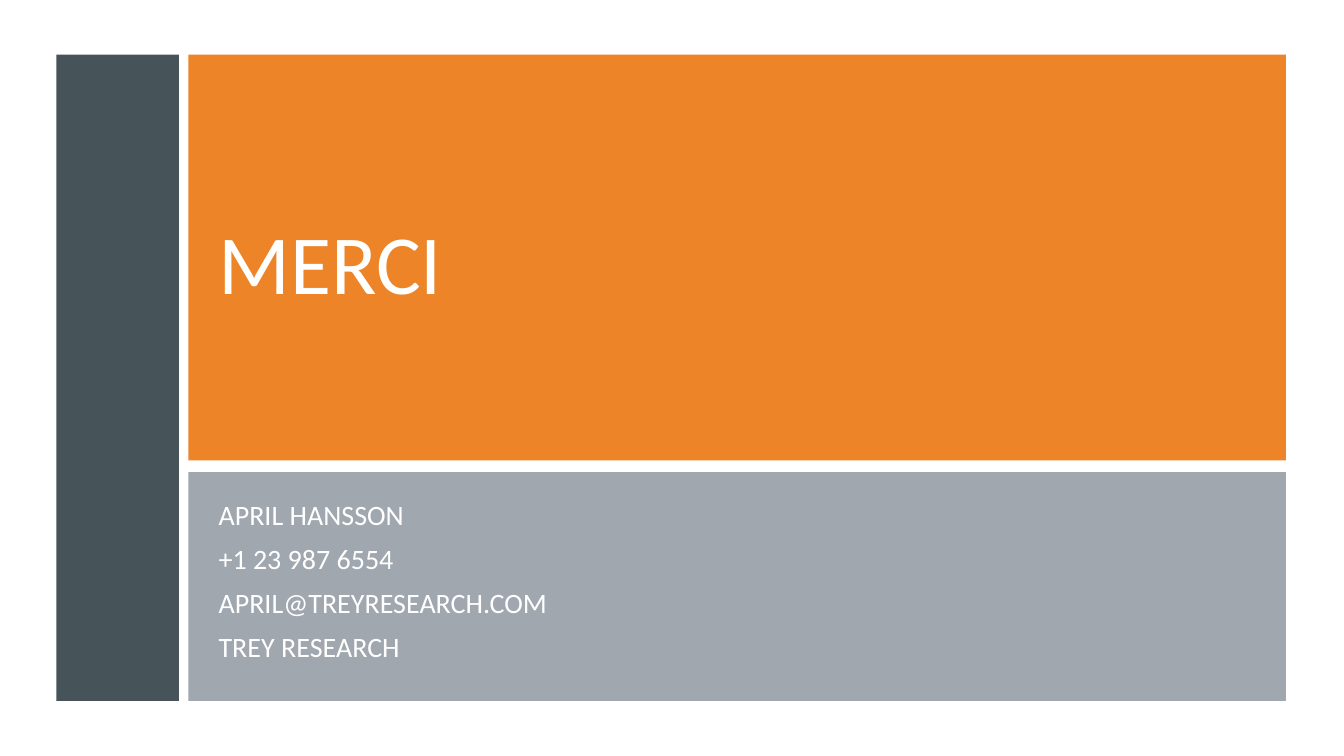
from dataclasses import dataclass

import pptx
import pptx.dml.color
import pptx.enum.shapes
import pptx.enum.text
import pptx.oxml
import pptx.oxml.ns
import pptx.slide
import pptx.util
from pptx.util import Cm, Pt

RGBColor = pptx.dml.color.RGBColor
Anchor = pptx.enum.text.MSO_ANCHOR

WHITE = RGBColor(0xFF, 0xFF, 0xFF)
SLATE = RGBColor(0x46, 0x53, 0x59)
ORANGE = RGBColor(0xED, 0x84, 0x28)
GREY = RGBColor(0x89, 0x92, 0x9B)

PANEL_LEFT, PANEL_WIDTH = 4.75, 27.66
TEXT_LEFT, TEXT_WIDTH = 5.26, 21.03


@dataclass(frozen=True)
class Box:
    """A rectangle in centimetres."""
    left: float
    top: float
    width: float
    height: float

    def lengths(self) -> tuple[pptx.util.Length, ...]:
        return Cm(self.left), Cm(self.top), Cm(self.width), Cm(self.height)


@dataclass(frozen=True)
class Panel:
    box: Box
    color: RGBColor
    opacity: int = 100


PANELS = (
    Panel(Box(1.42, 1.38, 3.09, 16.28), SLATE),
    Panel(Box(PANEL_LEFT, 1.38, PANEL_WIDTH, 10.22), ORANGE),
    Panel(Box(PANEL_LEFT, 11.9, PANEL_WIDTH, 5.76), GREY, opacity=80),
)
CONTACT_LINES = (
    "APRIL HANSSON",
    "+1 23 987 6554",
    "APRIL@TREYRESEARCH.COM",
    "TREY RESEARCH",
)


def add_panel(slide: pptx.slide.Slide, panel: Panel) -> None:
    rectangle = slide.shapes.add_shape(
        pptx.enum.shapes.MSO_SHAPE.RECTANGLE, *panel.box.lengths())
    rectangle.shadow.inherit = False
    rectangle.line.fill.background()
    rectangle.fill.solid()
    rectangle.fill.fore_color.rgb = panel.color
    if panel.opacity < 100:
        color = rectangle.fill._xPr.find(".//" + pptx.oxml.ns.qn("a:srgbClr"))
        alpha = pptx.oxml.parse_xml(
            f'<a:alpha {pptx.oxml.ns.nsdecls("a")} val="{panel.opacity * 1000}"/>')
        color.append(alpha)


def add_text(slide: pptx.slide.Slide, lines: tuple[str, ...], box: Box, *,
             size: float, anchor: Anchor = Anchor.TOP, line_spacing: float = 1.0,
             before: float = 0, after: float = 0) -> None:
    frame = slide.shapes.add_textbox(*box.lengths()).text_frame
    frame.word_wrap = True
    frame.vertical_anchor = anchor
    for index, line in enumerate(lines):
        paragraph = frame.add_paragraph() if index else frame.paragraphs[0]
        paragraph.text = line
        paragraph.line_spacing = line_spacing
        paragraph.space_before = Pt(before if index else 0)
        paragraph.space_after = Pt(after)
        paragraph.font.name = "Calibri"
        paragraph.font.size = Pt(size)
        paragraph.font.color.rgb = WHITE


def main() -> None:
    presentation = pptx.Presentation()
    presentation.slide_width = Cm(33.87)
    presentation.slide_height = Cm(19.05)
    slide = presentation.slides.add_slide(presentation.slide_layouts[6])
    slide.background.fill.solid()
    slide.background.fill.fore_color.rgb = WHITE

    for panel in PANELS:
        add_panel(slide, panel)
    add_text(slide, ("MERCI",), Box(TEXT_LEFT, 1.96, TEXT_WIDTH, 9.25),
             size=60, anchor=Anchor.MIDDLE)
    add_text(slide, CONTACT_LINES, Box(TEXT_LEFT, 12.5, TEXT_WIDTH, 4.55),
             size=20, line_spacing=0.9, before=4, after=6)
    presentation.save("out.pptx")


if __name__ == "__main__":
    main()
